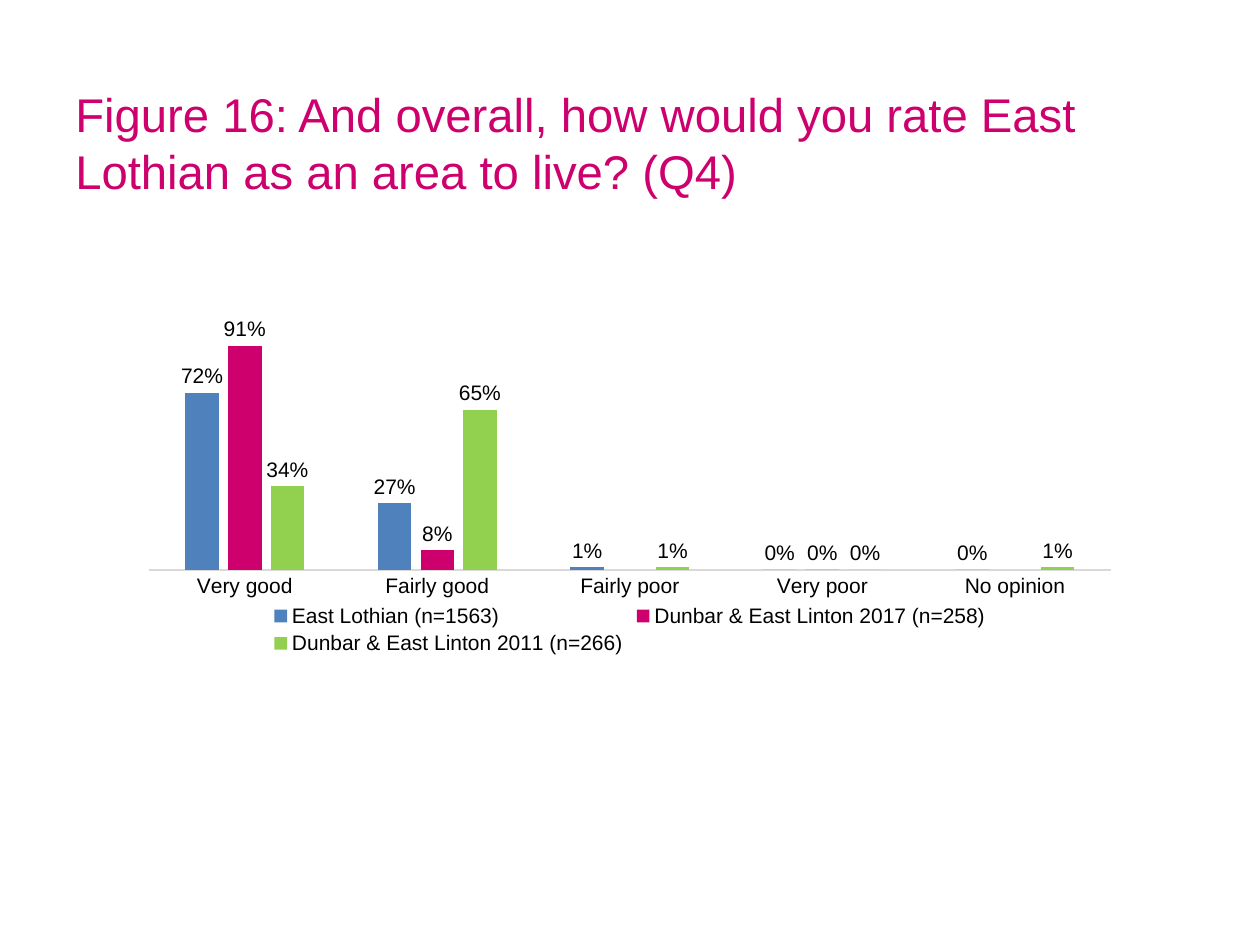
import pptx
import pptx.chart.data
import pptx.dml.color
import pptx.enum.chart
import pptx.enum.text
import pptx.oxml
import pptx.oxml.ns
import pptx.util

WIDTH, HEIGHT = 10, 7.5
MAGENTA, BLACK = "CD006E", "000000"
CATEGORIES = ["Very good", "Fairly good", "Fairly poor", "Very poor", "No opinion"]
SERIES = [
    ("East Lothian (n=1563)", "4F81BD", [0.72, 0.27, 0.01, 0, 0]),
    ("Dunbar & East Linton 2017 (n=258)", MAGENTA, [0.91, 0.08, None, 0, None]),
    ("Dunbar & East Linton 2011 (n=266)", "92D050", [0.34, 0.65, 0.01, 0, 0.01]),
]
PLOT_SHARES = {"x": 0.02, "y": 0.1, "w": 0.96, "h": 0.66}


def colour(value):
    return pptx.dml.color.RGBColor.from_string(value)


def apply(target, values):
    for name, value in values.items():
        setattr(target, name, value)


def style_font(font, size, value):
    apply(font, {"name": "Arial", "size": pptx.util.Pt(size), "bold": False})
    font.color.rgb = colour(value)


def area(left, top, width, height):
    """Turn shares of the slide's size into lengths."""
    return [pptx.util.Inches(share * side) for share, side in
            zip((left, top, width, height), (WIDTH, HEIGHT) * 2)]


def add_title(page, text):
    frame = page.shapes.add_textbox(*area(0.05, 0.04, 0.9, 0.22)).text_frame
    apply(frame, {"word_wrap": True,
                  "vertical_anchor": pptx.enum.text.MSO_ANCHOR.MIDDLE})
    span = frame.paragraphs[0].add_run()
    span.text = text
    style_font(span.font, 27, MAGENTA)


def place_plot(chart, shares):
    """Fix the inner plot area at shares of the chart's size."""
    modes = "".join(f'<c:{side}Mode val="edge"/>' for side in "xy")
    sizes = "".join(f'<c:{side} val="{share}"/>' for side, share in shares.items())
    layout = pptx.oxml.parse_xml(
        f'<c:layout {pptx.oxml.ns.nsdecls("c")}><c:manualLayout>'
        f'<c:layoutTarget val="inner"/>{modes}{sizes}'
        '</c:manualLayout></c:layout>')
    plot_area = chart.plots[0]._element.getparent()
    for old in plot_area.findall(pptx.oxml.ns.qn("c:layout")):
        plot_area.remove(old)
    plot_area.insert(0, layout)


def style_axes(chart):
    no_tick = pptx.enum.chart.XL_TICK_MARK.NONE
    axis = chart.category_axis
    apply(axis, {"major_tick_mark": no_tick, "minor_tick_mark": no_tick})
    style_font(axis.tick_labels.font, 12, BLACK)
    axis.format.line.color.rgb = colour("D9D9D9")
    axis.format.line.width = pptx.util.Pt(0.75)
    apply(chart.value_axis, {"minimum_scale": 0, "maximum_scale": 1,
                             "has_major_gridlines": False, "visible": False})


def style_series(series, fill):
    series.format.fill.solid()
    series.format.fill.fore_color.rgb = colour(fill)
    series.invert_if_negative = False
    labels = series.data_labels
    apply(labels, {"show_value": True, "number_format": "0%",
                   "number_format_is_linked": False,
                   "position": pptx.enum.chart.XL_LABEL_POSITION.OUTSIDE_END})
    style_font(labels.font, 12, BLACK)


def add_ratings_chart(page):
    data = pptx.chart.data.CategoryChartData(number_format="0%")
    data.categories = CATEGORIES
    for name, _, values in SERIES:
        data.add_series(name, values)
    chart = page.shapes.add_chart(
        pptx.enum.chart.XL_CHART_TYPE.COLUMN_CLUSTERED,
        *area(0.102, 0.303, 0.796, 0.395), data).chart
    style_font(chart.font, 12, BLACK)
    apply(chart, {"has_title": False, "has_legend": True})
    apply(chart.legend, {"include_in_layout": False,
                         "position": pptx.enum.chart.XL_LEGEND_POSITION.BOTTOM})
    style_font(chart.legend.font, 12, BLACK)
    apply(chart.plots[0], {"gap_width": 219, "overlap": -27, "vary_by_categories": False})
    style_axes(chart)
    for series, (_, fill, _) in zip(chart.plots[0].series, SERIES):
        style_series(series, fill)
    place_plot(chart, PLOT_SHARES)


def main():
    deck = pptx.Presentation()
    apply(deck, {"slide_width": pptx.util.Inches(WIDTH),
                 "slide_height": pptx.util.Inches(HEIGHT)})
    page = deck.slides.add_slide(deck.slide_layouts[6])
    add_title(page, "Figure 16: And overall, how would you rate East Lothian "
                    "as an area to live? (Q4)")
    add_ratings_chart(page)
    deck.save("out.pptx")


if __name__ == "__main__":
    main()
